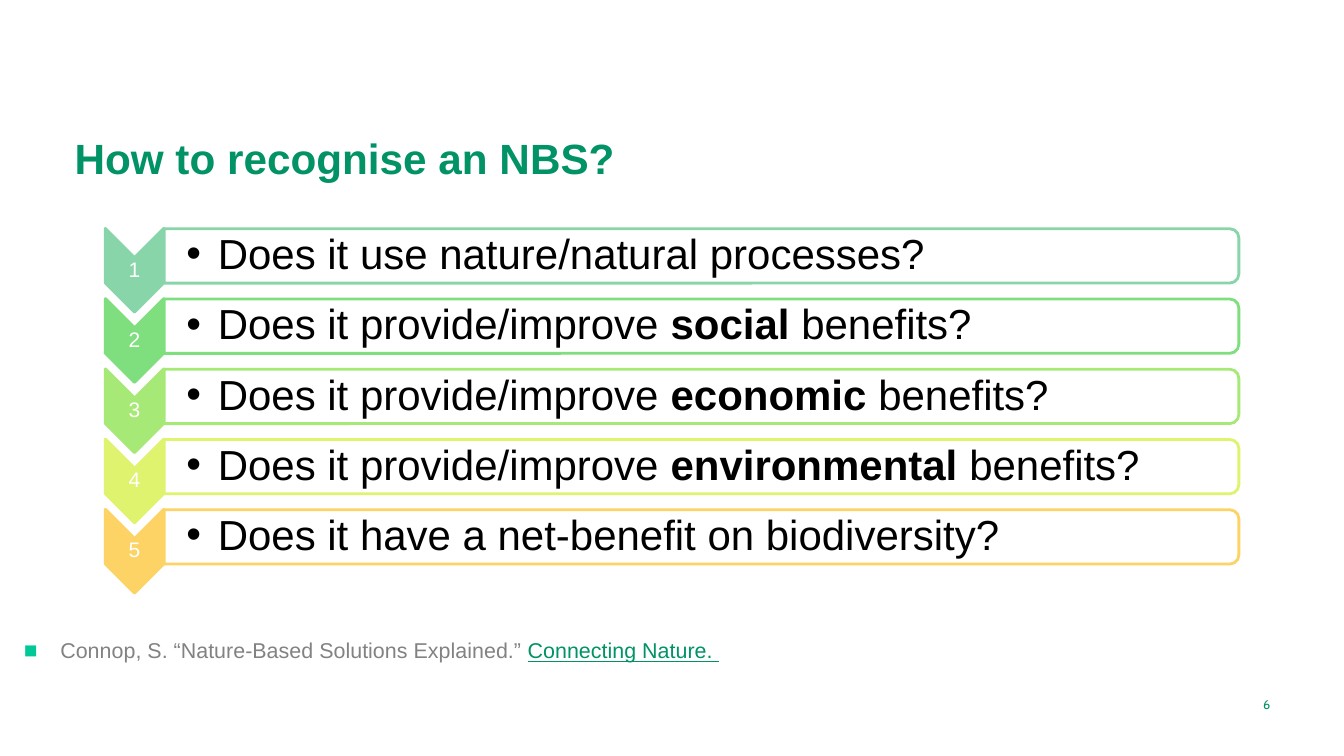
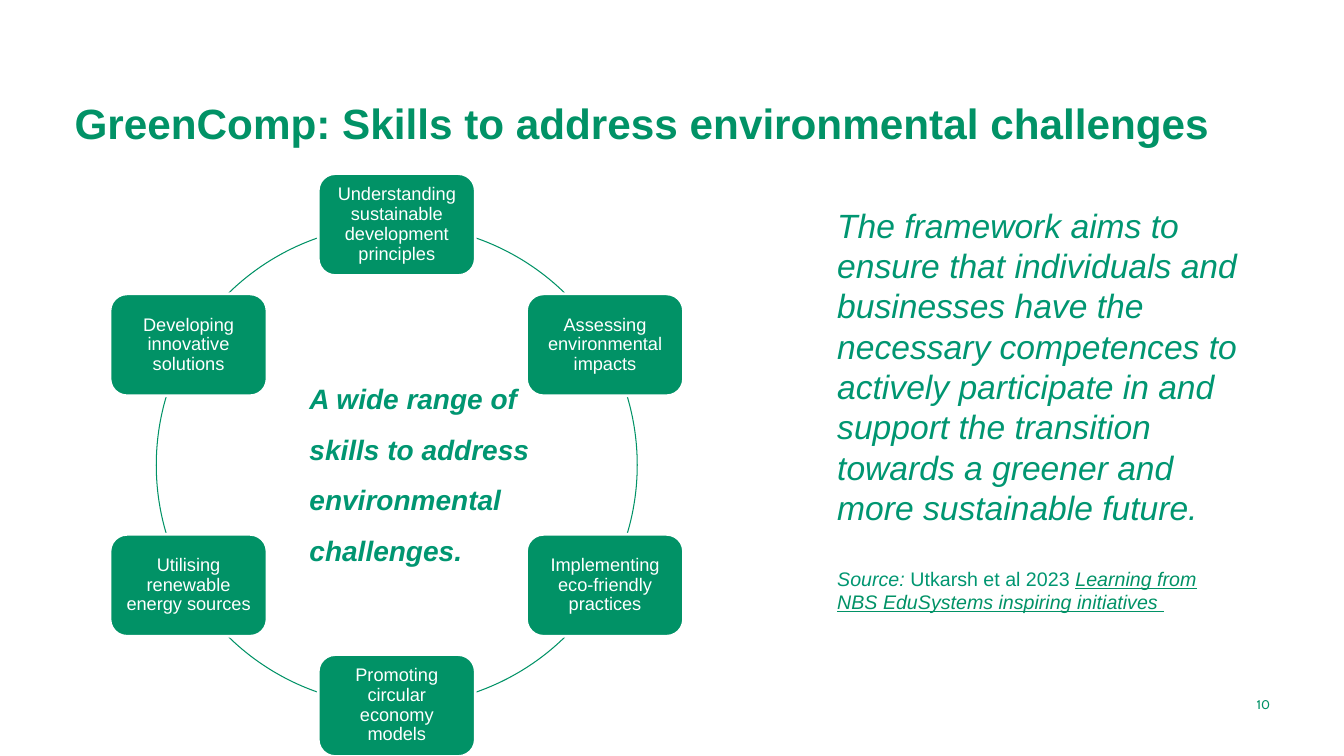
from dataclasses import dataclass
from math import cos, radians, sin

from lxml.etree import SubElement
from pptx import Presentation
from pptx.dml.color import RGBColor
from pptx.enum.shapes import MSO_SHAPE as Figure
from pptx.enum.text import MSO_ANCHOR as Anchor, PP_ALIGN as Align
from pptx.oxml.ns import qn
from pptx.util import Cm, Pt


@dataclass(frozen=True)
class Theme:
    # Colours
    green: str = "019266"
    deep_green: str = "009671"
    mint: str = "00C897"
    grey: str = "828282"
    black: str = "000000"
    white: str = "FFFFFF"
    steps: tuple = ("88D5A9", "7FDF7F", "A7E976", "DFF36E", "FDD365")
    # Fonts and type sizes
    font: str = "Arial"
    number_font: str = "Cabin"
    title: float = 30.2
    question: float = 30
    framework: float = 24
    summary: float = 20
    citation: float = 15.3
    step: float = 15
    source: float = 14
    skill: float = 13
    page: float = 9


THEME = Theme()
LINK = {"color": THEME.green, "underline": True}

QUESTIONS = [
    "Does it use nature/natural processes?",
    *([("Does it provide/improve ", {}), (kind, {"bold": True}), (" benefits?", {})]
      for kind in ("social", "economic", "environmental")),
    "Does it have a net-benefit on biodiversity?",
]

# Clockwise from the top of the ring
SKILLS = [
    "Understanding sustainable development principles",
    "Assessing environmental impacts",
    "Implementing eco-friendly practices",
    "Promoting circular economy models",
    "Utilising renewable energy sources",
    "Developing innovative solutions",
]
# Visible stretches of the right half of the ring, in degrees from the top
RING_GAPS = [(19.2, 44.3), (73.5, 106.5), (135.7, 160.8)]


def centred(x, y, width, height):
    """Box in cm around a centre point."""
    return x - width / 2, y - height / 2, width, height


def add_bullet(paragraph, char, color):
    props = paragraph._p.get_or_add_pPr()
    tint = SubElement(props, qn("a:buClr"))
    SubElement(tint, qn("a:srgbClr")).set("val", color)
    SubElement(props, qn("a:buFont")).set("typeface", THEME.font)
    SubElement(props, qn("a:buChar")).set("char", char)


def write(frame, text, *, size, color, font=THEME.font, align=Align.LEFT,
          spacing=None, before=None, indent=None, bullet=None, **style):
    """Add a paragraph; text is a string or a list of (string, run style)."""
    paragraph = frame.paragraphs[0]
    if paragraph.runs:
        paragraph = frame.add_paragraph()
    if indent:
        props = paragraph._p.get_or_add_pPr()
        for name, length in zip(("marL", "indent"), indent):
            props.set(name, str(Cm(length)))
    if bullet:
        add_bullet(paragraph, *bullet)
    paragraph.alignment = align
    if spacing:
        paragraph.line_spacing = spacing
    if before:
        paragraph.space_before = Pt(before)
    for words, changes in [(text, {})] if isinstance(text, str) else text:
        run = paragraph.add_run()
        run.text = words
        look = {"color": color, **style, **changes}
        run.font.name, run.font.size = font, Pt(size)
        run.font.color.rgb = RGBColor.from_string(look["color"])
        for name in ("bold", "italic", "underline"):
            setattr(run.font, name, look.get(name, False))


def set_frame(frame, anchor, insets):
    frame.word_wrap = True
    frame.vertical_anchor = anchor
    (frame.margin_left, frame.margin_top,
     frame.margin_right, frame.margin_bottom) = map(Cm, insets)
    return frame


def add_text_area(slide, box, anchor=Anchor.MIDDLE, insets=(0.25, 0.13, 0.25, 0.13)):
    area = slide.shapes.add_textbox(*map(Cm, box))
    return set_frame(area.text_frame, anchor, insets)


def add_figure(slide, kind, box, line, fill=None, weight=2, rotation=0):
    figure = slide.shapes.add_shape(kind, *map(Cm, box))
    figure.shadow.inherit = False
    figure.rotation = rotation
    if fill:
        figure.fill.solid()
        figure.fill.fore_color.rgb = RGBColor.from_string(fill)
    else:
        figure.fill.background()
    figure.line.color.rgb = RGBColor.from_string(line)
    figure.line.width = Pt(weight)
    return figure


def add_page(deck, title, title_top, number):
    """Slide with the shared title and page number."""
    slide = deck.slides.add_slide(deck.slide_layouts[6])
    write(add_text_area(slide, (1.63, title_top, 30.63, 2.08), Anchor.BOTTOM), title,
          size=THEME.title, color=THEME.green, bold=True)
    write(add_text_area(slide, (29.34, 17.25, 2.92, 1.02)), str(number),
          size=THEME.page, color=THEME.green, font=THEME.number_font, align=Align.RIGHT)
    return slide


def add_question(slide, index, question):
    color = THEME.steps[index]
    drop = index * 1.77
    # Numbered chevron
    step_x, step_y = 3.39, 6.81 + drop
    add_figure(slide, Figure.CHEVRON, centred(step_x, step_y, 2.11, 1.47),
               color, fill=color, rotation=90)
    label = add_text_area(slide, centred(step_x, step_y, 1.47, 0.64), insets=(0.03,) * 4)
    write(label, str(index + 1), size=THEME.step, color=THEME.white,
          align=Align.CENTER, spacing=0.9)
    # Question bar
    bar_x, bar_y, length, depth = 17.68, 6.45 + drop, 27.08, 1.37
    add_figure(slide, Figure.ROUND_2_SAME_RECTANGLE, centred(bar_x, bar_y, depth, length),
               color, fill=THEME.white, rotation=90)
    area = add_text_area(slide, centred(bar_x, bar_y, length, 1.24),
                         insets=(0.56, 0.05, 0.05, 0.05))
    write(area, question, size=THEME.question, color=THEME.black, spacing=0.9,
          indent=(0.79, -0.79), bullet=("•", THEME.black))


def add_skill_ring(slide, x, y, radius):
    # Ring stretches, the left half repeating the right
    for half in (0, 180):
        for span in RING_GAPS:
            arc = add_figure(slide, Figure.ARC, centred(x, y, 2 * radius, 2 * radius),
                             THEME.green, weight=0.75)
            for i, angle in enumerate(span):
                # Arc angles count from three o'clock in 1/60000 degree
                arc.adjustments[i] = (angle + half - 90) % 360 * 0.6
    # Skill boxes
    for i, skill in enumerate(SKILLS):
        turn = radians(i * 360 / len(SKILLS))
        box = centred(x + radius * sin(turn), y - radius * cos(turn), 3.96, 2.57)
        card = add_figure(slide, Figure.ROUNDED_RECTANGLE, box, THEME.white, fill=THEME.green)
        write(set_frame(card.text_frame, Anchor.MIDDLE, (0.13,) * 4), skill,
              size=THEME.skill, color=THEME.white, align=Align.CENTER, spacing=0.9)


def build_questions(deck):
    slide = add_page(deck, "How to recognise an NBS?", 2.67, 6)
    for index, question in enumerate(QUESTIONS):
        add_question(slide, index, question)
    # Citation
    write(add_text_area(slide, (0, 15.34, 18.77, 1.83)),
          [("Connop, S. “Nature-Based Solutions Explained.” ", {}),
           ("Connecting Nature. ", LINK)],
          size=THEME.citation, color=THEME.grey, spacing=1.4,
          indent=(1.27, -0.91), bullet=("◼", THEME.mint))


def build_skills(deck):
    slide = add_page(deck, "GreenComp: Skills to address environmental challenges", 1.78, 10)
    # Centre of the ring
    write(add_text_area(slide, (7.19, 5.21, 7.47, 13.06)),
          "A wide range of skills to address environmental challenges.",
          size=THEME.summary, color=THEME.deep_green, bold=True, italic=True,
          spacing=1.5, indent=(0.36, 0))
    add_skill_ring(slide, 10, 11.72, 6.06)
    # Framework aim and its source
    aim = add_text_area(slide, (20.85, 5.03, 10.69, 10.69), Anchor.TOP)
    write(aim, "The framework aims to ensure that individuals and businesses have the "
               "necessary competences to actively participate in and support the "
               "transition towards a greener and more sustainable future.",
          size=THEME.framework, color=THEME.deep_green, italic=True)
    write(aim, [("Source: ", {}), ("Utkarsh et al 2023 ", {"italic": False}),
                ("Learning from NBS EduSystems inspiring initiatives ", LINK)],
          size=THEME.source, color=THEME.deep_green, italic=True, before=28)


def main():
    deck = Presentation()
    deck.slide_width, deck.slide_height = Cm(33.87), Cm(19.05)
    build_questions(deck)
    build_skills(deck)
    deck.save("out.pptx")


if __name__ == "__main__":
    main()
